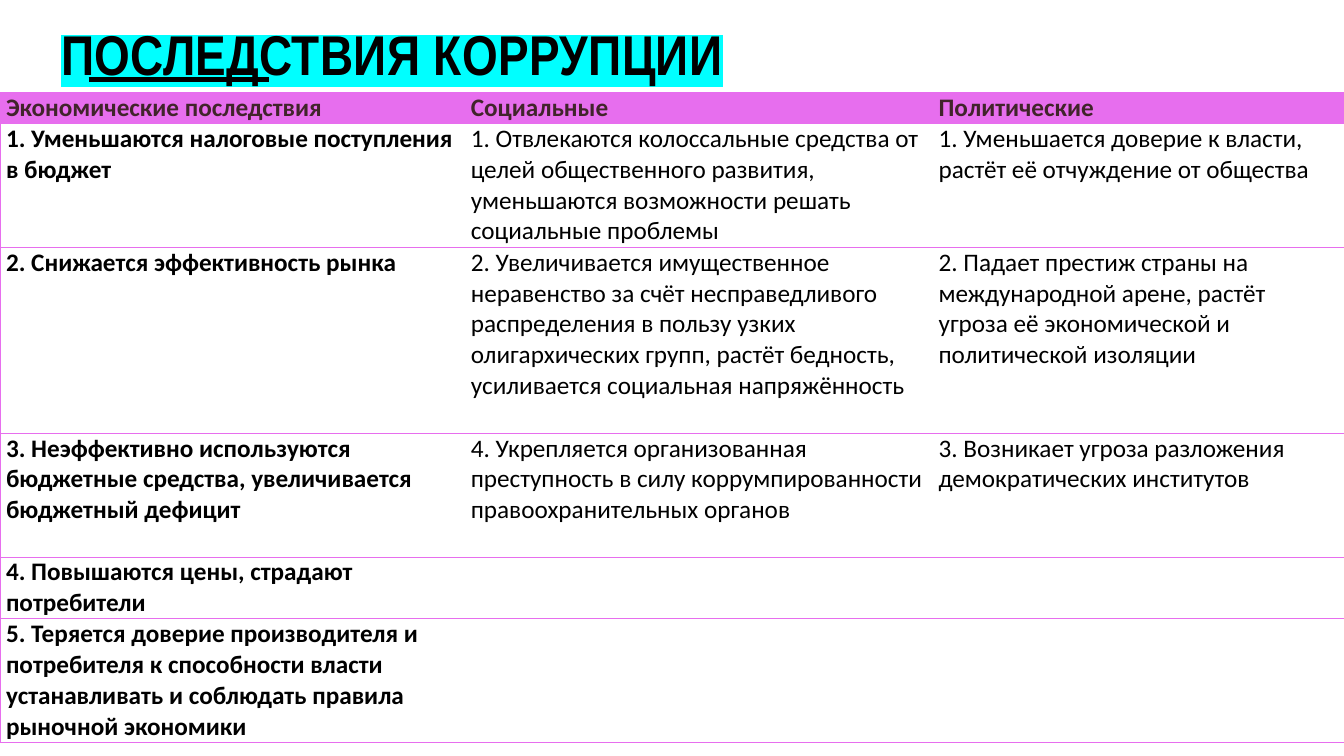
from dataclasses import dataclass

from lxml import etree
from pptx import Presentation
from pptx.dml.color import RGBColor
from pptx.enum.shapes import MSO_CONNECTOR
from pptx.enum.text import MSO_ANCHOR, PP_ALIGN
from pptx.oxml.ns import qn
from pptx.util import Inches, Pt

STRAIGHT = MSO_CONNECTOR.STRAIGHT
BOTTOM = MSO_ANCHOR.BOTTOM
LEFT, JUSTIFY = PP_ALIGN.LEFT, PP_ALIGN.JUSTIFY

TITLE = "ПОСЛЕДСТВИЯ КОРРУПЦИИ"
ROWS = [
    ("Экономические последствия", "Социальные", "Политические"),
    ("1. Уменьшаются налоговые поступления в бюджет",
     "1. Отвлекаются колоссальные средства от целей общественного развития, "
     "уменьшаются возможности решать социальные проблемы",
     "1. Уменьшается доверие к власти, растёт её отчуждение от общества"),
    ("2. Снижается эффективность рынка",
     "2. Увеличивается имущественное неравенство за счёт несправедливого "
     "распределения в пользу узких олигархических групп, растёт бедность, "
     "усиливается социальная напряжённость",
     "2. Падает престиж страны на международной арене, растёт угроза её "
     "экономической и политической изоляции"),
    ("3. Неэффективно используются бюджетные средства, увеличивается "
     "бюджетный дефицит",
     "4. Укрепляется организованная преступность в силу коррумпированности "
     "правоохранительных органов",
     "3. Возникает угроза разложения демократических институтов"),
    ("4. Повышаются цены, страдают потребители", "", ""),
    ("5. Теряется доверие производителя и потребителя к способности власти "
     "устанавливать и соблюдать правила рыночной экономики", "", ""),
]
COLUMN_WIDTHS = (4.61, 4.64, 4.08)
LINES_PER_ROW = (1, 4, 6, 4, 2, 4)
LINE_HEIGHT = 0.307
TABLE_TOP = 0.92


@dataclass(frozen=True)
class Theme:
    title_font: str = "Arial Narrow"
    body_font: str = "Calibri"
    title_size: float = 40
    body_size: float = 18
    black: str = "000000"
    header_text: str = "41242B"
    pink: str = "E76EEE"
    highlight: str = "00FFFF"
    border_width: float = 0.5
    underline_width: float = 3.5


THEME = Theme()


def format_run(run, font, size, color, bold):
    run.font.name = font
    run.font.size = Pt(size)
    run.font.bold = bold
    run.font.color.rgb = RGBColor.from_string(color)


def add_title(slide):
    box = slide.shapes.add_textbox(Inches(0.51), Inches(0.14), Inches(11.89), Inches(0.77))
    frame = box.text_frame
    frame.word_wrap = True
    frame.vertical_anchor = BOTTOM
    frame.text = TITLE
    paragraph = frame.paragraphs[0]
    paragraph.line_spacing = 0.83
    run = paragraph.runs[0]
    format_run(run, THEME.title_font, THEME.title_size, THEME.black, True)
    properties = run.font._element
    properties.set("spc", "30")
    highlight = etree.Element(qn("a:highlight"))
    etree.SubElement(highlight, qn("a:srgbClr")).set("val", THEME.highlight)
    properties.find(qn("a:solidFill")).addnext(highlight)


def add_underline(slide):
    line = slide.shapes.add_connector(
        STRAIGHT, Inches(0.88), Inches(0.79), Inches(2.67), Inches(0.79))
    line.line.color.rgb = RGBColor.from_string(THEME.black)
    line.line.width = Pt(THEME.underline_width)
    etree.SubElement(line._element.spPr, qn("a:effectLst"))


def set_borders(cell, visible_sides):
    """Draw the named sides (L, R, T, B) in pink and hide the others."""
    properties = cell._tc.get_or_add_tcPr()
    for index, side in enumerate("LRTB"):
        border = etree.Element(qn(f"a:ln{side}"))
        border.set("w", str(Pt(THEME.border_width)))
        if side in visible_sides:
            fill = etree.SubElement(border, qn("a:solidFill"))
            etree.SubElement(fill, qn("a:srgbClr")).set("val", THEME.pink)
        else:
            etree.SubElement(border, qn("a:noFill"))
        properties.insert(index, border)


def fill_cell(cell, text, is_header, is_first, is_last):
    cell.margin_left = cell.margin_right = Inches(0.06)
    cell.margin_top = cell.margin_bottom = 0
    if is_header:
        cell.fill.solid()
        cell.fill.fore_color.rgb = RGBColor.from_string(THEME.pink)
    else:
        cell.fill.background()
    set_borders(cell, "TB" + "L" * is_first + "R" * is_last)
    if text:
        cell.text_frame.text = text
        paragraph = cell.text_frame.paragraphs[0]
        paragraph.alignment = JUSTIFY if is_header else LEFT
        color = THEME.header_text if is_header else THEME.black
        format_run(paragraph.runs[0], THEME.body_font, THEME.body_size, color,
                   is_header or is_first)


def add_consequences_table(slide):
    heights = [lines * LINE_HEIGHT for lines in LINES_PER_ROW]
    table = slide.shapes.add_table(
        len(ROWS), len(COLUMN_WIDTHS), 0, Inches(TABLE_TOP),
        Inches(sum(COLUMN_WIDTHS)), Inches(sum(heights))).table
    table.horz_banding = False
    for column, width in zip(table.columns, COLUMN_WIDTHS):
        column.width = Inches(width)
    last = len(COLUMN_WIDTHS) - 1
    for row_index, texts in enumerate(ROWS):
        table.rows[row_index].height = Inches(heights[row_index])
        for column_index, text in enumerate(texts):
            fill_cell(table.cell(row_index, column_index), text,
                      row_index == 0, column_index == 0, column_index == last)


def main():
    presentation = Presentation()
    presentation.slide_width = Inches(13.33)
    presentation.slide_height = Inches(7.5)
    slide = presentation.slides.add_slide(presentation.slide_layouts[6])
    add_title(slide)
    add_underline(slide)
    add_consequences_table(slide)
    presentation.save("out.pptx")


if __name__ == "__main__":
    main()
